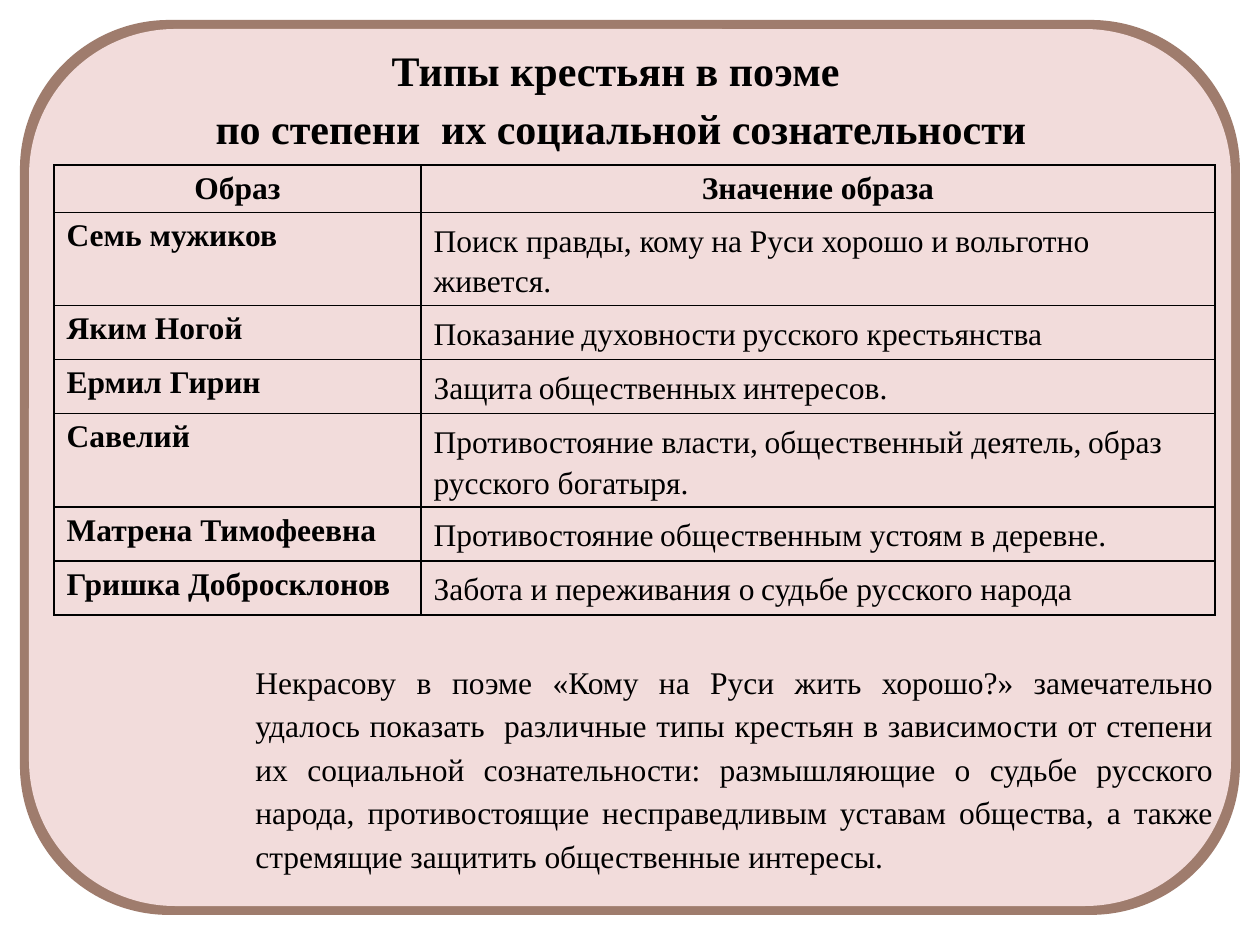
from lxml import etree
from pptx import Presentation
from pptx import util as u
from pptx.dml.color import RGBColor
from pptx.enum import shapes, text
from pptx.oxml.ns import qn

SERIF, SANS = "Times New Roman", "Calibri"
BLACK = "000000"
ROWS = [
    ("Семь мужиков", SERIF,
     ["Поиск правды, кому", "на Руси хорошо и", "вольготно живется."]),
    ("Яким Ногой", SANS,
     ["Показание", "духовности", "русского крестьянства"]),
    ("Ермил Гирин", SANS, ["Защита", "общественных", "интересов."]),
    ("Савелий", SANS,
     ["Противостояние власти,", "общественный деятель,",
      "образ русского богатыря."]),
    ("Матрена Тимофеевна", SANS,
     ["Противостояние", "общественным устоям в деревне."]),
    ("Гришка Добросклонов", SANS,
     ["Забота и переживания о", "судьбе русского народа"]),
]
NOTE = ("Некрасову в поэме «Кому на Руси жить хорошо?» замечательно удалось "
        "показать  различные типы крестьян в зависимости от степени их "
        "социальной сознательности: размышляющие о судьбе русского народа, "
        "противостоящие несправедливым уставам общества, а также стремящие "
        "защитить общественные интересы.")


def px(n):
    return u.Emu(round(n * 914400 / 126))


def color(code):
    return RGBColor.from_string(code)


def add_run(para, words, size=18, bold=False, face=SERIF):
    run = para.add_run()
    run.text = words
    font = run.font
    font.size, font.bold, font.name = u.Pt(size), bold, face
    font.color.rgb = color(BLACK)


def space(para):
    """Set the loose line spacing shared by the longer texts."""
    para.line_spacing, para.space_after = 1.15, u.Pt(10)


def draw_frame(slide, box, edge):
    x, y, w, h = box
    for inset, fill in ((0, "9F7C6D"), (edge, "F2DCDB")):
        panel = slide.shapes.add_shape(
            shapes.MSO_SHAPE.ROUNDED_RECTANGLE, px(x + inset), px(y + inset),
            px(w - 2 * inset), px(h - 2 * inset))
        panel.shadow.inherit = False
        panel.fill.solid()
        panel.fill.fore_color.rgb = color(fill)
        panel.line.fill.background()


def set_title(slide, box):
    title = slide.shapes.title
    title.left, title.top, title.width, title.height = map(px, box)
    frame = title.text_frame
    frame.word_wrap = True
    frame.vertical_anchor = text.MSO_ANCHOR.MIDDLE
    para = frame.paragraphs[0]
    para.alignment = text.PP_ALIGN.CENTER
    space(para)
    add_run(para, "Типы крестьян в поэме ", 24, True)
    para.add_line_break()
    etree.SubElement(para._p.find(qn("a:br")), qn("a:rPr"), sz="2400")
    add_run(para, "по степени  их социальной сознательности", 24, True)


def set_border(cell):
    props = cell._tc.get_or_add_tcPr()
    for i, side in enumerate(("lnL", "lnR", "lnT", "lnB")):
        line = etree.Element(qn(f"a:{side}"), w=str(u.Pt(1)))
        fill = etree.SubElement(line, qn("a:solidFill"))
        etree.SubElement(fill, qn("a:srgbClr"), val=BLACK)
        props.insert(i, line)


def add_grid(slide, box, split):
    x, y, w, h = box
    grid = slide.shapes.add_table(
        len(ROWS) + 1, 2, px(x), px(y), px(w), px(h)).table
    grid.first_row = grid.horz_banding = False
    grid.columns[0].width, grid.columns[1].width = px(split), px(w - split)
    for row, high in zip(grid.rows, (47, 93, 54, 54, 93, 54, 54)):
        row.height = px(high)
    for cell in grid.iter_cells():
        cell.fill.background()
        set_border(cell)
    for col, head in enumerate(("Образ", "Значение образа")):
        para = grid.cell(0, col).text_frame.paragraphs[0]
        para.alignment = text.PP_ALIGN.CENTER
        add_run(para, head, bold=True)
    for i, (name, face, parts) in enumerate(ROWS, 1):
        add_run(grid.cell(i, 0).text_frame.paragraphs[0], name, bold=True)
        para = grid.cell(i, 1).text_frame.paragraphs[0]
        space(para)
        for j, part in enumerate(parts):
            if j:
                add_run(para, " ", 16, face=face)
            add_run(para, part)


def add_note(slide, box):
    frame = slide.shapes.add_textbox(*map(px, box)).text_frame
    frame.word_wrap = True
    para = frame.paragraphs[0]
    para.alignment = text.PP_ALIGN.JUSTIFY
    space(para)
    add_run(para, NOTE)


def main():
    deck = Presentation()
    deck.slide_width, deck.slide_height = px(1260), px(945)
    slide = deck.slides.add_slide(deck.slide_layouts[5])
    draw_frame(slide, (20, 20, 1220, 895), 9)
    set_title(slide, (54, 16, 1134, 158))
    add_grid(slide, (54, 165, 1161, 449), 367)
    add_note(slide, (243, 651, 983, 232))
    # The title placeholder comes first, so lift it above the frame.
    slide.shapes._spTree.append(slide.shapes.title._element)
    deck.save("out.pptx")


if __name__ == "__main__":
    main()
